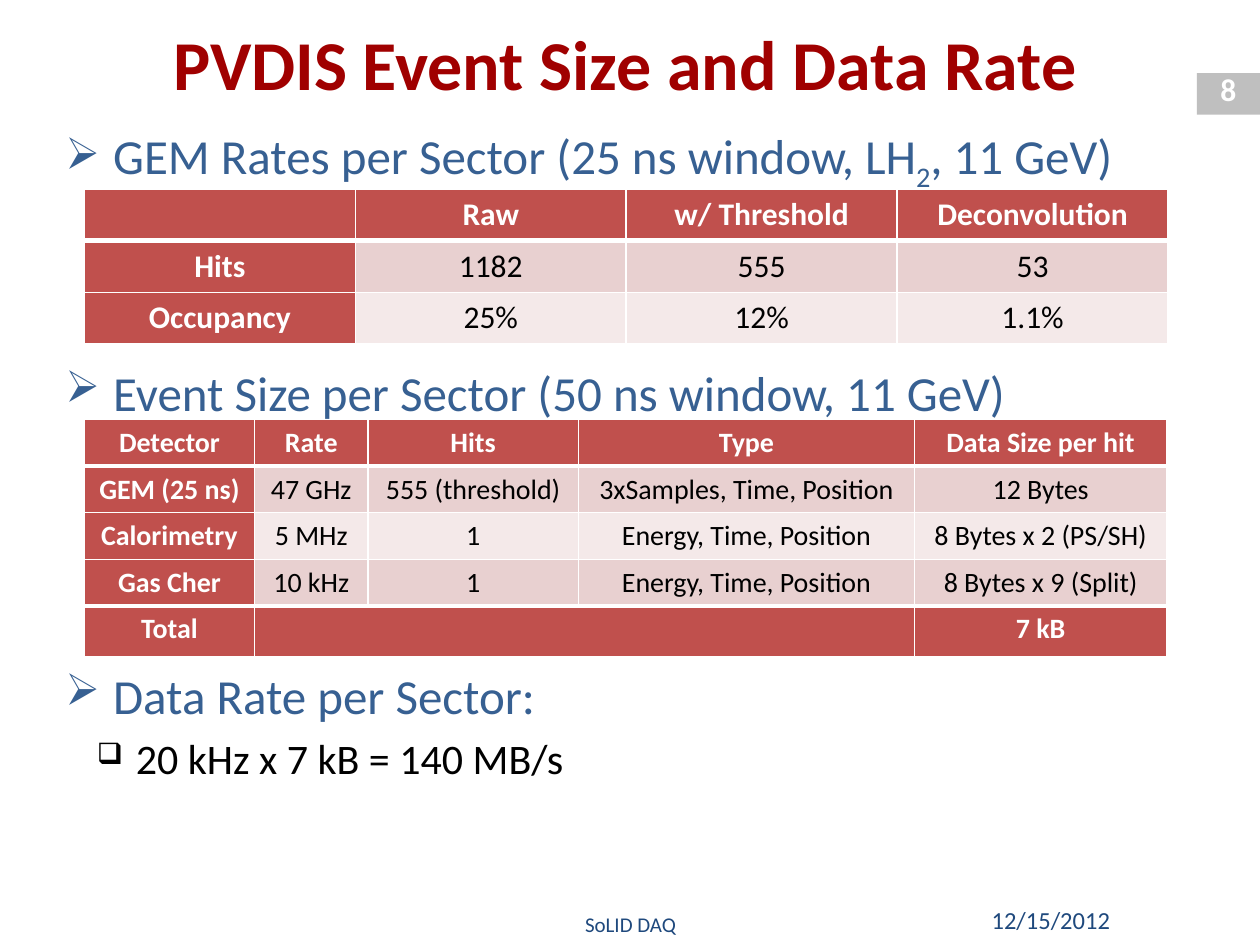
import pptx
import pptx.util
import pptx.dml.color
import pptx.enum.text
import pptx.enum.shapes
import pptx.oxml
import pptx.oxml.ns
import lxml.etree

Inches, Pt = pptx.util.Inches, pptx.util.Pt
ALIGN = pptx.enum.text.PP_ALIGN
ANCHOR = pptx.enum.text.MSO_ANCHOR
FONT = "Calibri"
COLORS = {
    "title": "A00000", "heading": "376092", "footer": "1F497D", "text": "000000",
    "white": "FFFFFF", "tab": "BFBFBF", "accent": "C0504D",
    "odd": "E8D0D0", "even": "F4E9E9",
}

TITLE = "PVDIS Event Size and Data Rate"
HEADING = {"size": 28, "color": "heading", "indent": 0.38, "hang": 0.38,
           "bullet": "➢", "percent": 90}
DETAIL = {"size": 24, "color": "text", "indent": 0.56, "hang": 0.31,
          "bullet": "❑", "percent": 70}
OUTLINE = [
    (HEADING, 0, [("GEM Rates per Sector (25 ns window, LH", False), ("2", True),
                  (", 11 GeV)", False)]),
    (HEADING, 97, [("Event Size per Sector (50 ns window, 11 GeV)", False)]),
    (HEADING, 139.5, [("Data Rate per Sector:", False)]),
    (DETAIL, 4.8, [("20 kHz x 7 kB = 140 MB/s", False)]),
]
TABLES = [
    {"top": 1.5, "row": 0.41, "size": 18, "columns": [2.15] * 4, "total": False,
     "anchor": ANCHOR.MIDDLE,
     "rows": [["", "Raw", "w/ Threshold", "Deconvolution"],
              ["Hits", "1182", "555", "53"],
              ["Occupancy", "25%", "12%", "1.1%"]]},
    {"top": 3.33, "row": 0.37, "size": 16, "columns": [1.35, 0.9, 1.67, 2.67, 2],
     "total": True, "anchor": ANCHOR.TOP,
     "rows": [["Detector", "Rate", "Hits", "Type", "Data Size per hit"],
              ["GEM (25 ns)", "47 GHz", "555 (threshold)",
               "3xSamples, Time, Position", "12 Bytes"],
              ["Calorimetry", "5 MHz", "1", "Energy, Time, Position",
               "8 Bytes x 2 (PS/SH)"],
              ["Gas Cher", "10 kHz", "1", "Energy, Time, Position",
               "8 Bytes x 9 (Split)"],
              ["Total", "", "", "", "7 kB"]]},
]
LABELS = [
    ("8", (9.5, 0.51, 0.5, 0.4), ALIGN.CENTER, ANCHOR.TOP, 18, "white", True),
    ("12/15/2012", (7.58, 7.1, 1.33, 0.4), ALIGN.RIGHT, ANCHOR.MIDDLE, 14, "footer", False),
    ("SoLID DAQ", (2.42, 7.17, 5.17, 0.33), ALIGN.CENTER, ANCHOR.MIDDLE, 12, "footer", False),
]


def rgb(name):
    return pptx.dml.color.RGBColor.from_string(COLORS[name])


def add_span(para, text, size, color, bold=False):
    span = para.add_run()
    span.text = text
    for key, value in {"name": FONT, "size": Pt(size), "bold": bold}.items():
        setattr(span.font, key, value)
    span.font.color.rgb = rgb(color)
    return span


def add_box(page, place, anchor):
    box = page.shapes.add_textbox(*map(Inches, place))
    box.text_frame.word_wrap = True
    box.text_frame.vertical_anchor = anchor
    return box.text_frame


def add_bullet(para, style):
    properties = para._p.get_or_add_pPr()
    properties.set("marL", str(Inches(style["indent"])))
    properties.set("indent", str(-Inches(style["hang"])))
    for tag, key, value in (("a:buSzPct", "val", str(style["percent"] * 1000)),
                            ("a:buChar", "char", style["bullet"])):
        lxml.etree.SubElement(properties, pptx.oxml.ns.qn(tag)).set(key, value)


def set_borders(cell, widths):
    properties = cell._tc.get_or_add_tcPr()
    for side, width in widths.items():
        properties.append(pptx.oxml.parse_xml(
            f'<a:ln{side} {pptx.oxml.ns.nsdecls("a")} w="{Pt(width)}"><a:solidFill>'
            f'<a:srgbClr val="{COLORS["white"]}"/></a:solidFill></a:ln{side}>'))


def add_table(page, data):
    rows, columns = data["rows"], data["columns"]
    last = len(rows) - 1
    thick = {1, last} if data["total"] else {1}
    table = page.shapes.add_table(
        len(rows), len(columns), Inches(0.67), Inches(data["top"]),
        Inches(sum(columns)), Inches(data["row"] * len(rows))).table
    for column, width in zip(table.columns, columns):
        column.width = Inches(width)
    for r, texts in enumerate(rows):
        table.rows[r].height = Inches(data["row"])
        total = data["total"] and r == last
        for c, text in enumerate(texts):
            cell = table.cell(r, c)
            strong = r == 0 or c == 0 or total
            set_borders(cell, {"L": 1, "R": 1, "T": 3 if r in thick else 1,
                               "B": 3 if r + 1 in thick else 1})
            cell.fill.solid()
            cell.fill.fore_color.rgb = rgb("accent" if strong else "odd" if r % 2 else "even")
            cell.vertical_anchor = data["anchor"]
            para = cell.text_frame.paragraphs[0]
            para.alignment = ALIGN.CENTER
            add_span(para, text, data["size"], "white" if strong else "text", strong)
    if data["total"]:
        table.cell(last, 1).merge(table.cell(last, len(columns) - 2))


def main():
    deck = pptx.Presentation()
    deck.slide_width, deck.slide_height = Inches(10), Inches(7.5)
    page = deck.slides.add_slide(deck.slide_layouts[5])

    title = page.shapes.title
    for key, value in {"left": 0.42, "top": 0.08, "width": 9.08, "height": 0.83}.items():
        setattr(title, key, Inches(value))
    title.text_frame.vertical_anchor = ANCHOR.MIDDLE
    para = title.text_frame.paragraphs[0]
    para.alignment = ALIGN.CENTER
    add_span(para, TITLE, 40, "title", True)

    tab = page.shapes.add_shape(pptx.enum.shapes.MSO_SHAPE.RECTANGLE,
                                *map(Inches, (9.5, 0.58, 0.5, 0.33)))
    tab.shadow.inherit = False
    tab.fill.solid()
    tab.fill.fore_color.rgb = rgb("tab")
    tab.line.fill.background()

    frame = add_box(page, (0.42, 0.95, 9.17, 6.06), ANCHOR.TOP)
    for i, (style, space, parts) in enumerate(OUTLINE):
        para = frame.add_paragraph() if i else frame.paragraphs[0]
        para.space_before = Pt(space)
        add_bullet(para, style)
        for text, lowered in parts:
            span = add_span(para, text, style["size"], style["color"])
            if lowered:
                span._r.get_or_add_rPr().set("baseline", "-25000")

    for text, place, align, anchor, size, color, bold in LABELS:
        para = add_box(page, place, anchor).paragraphs[0]
        para.alignment = align
        add_span(para, text, size, color, bold)

    for data in TABLES:
        add_table(page, data)
    deck.save("out.pptx")


if __name__ == "__main__":
    main()
